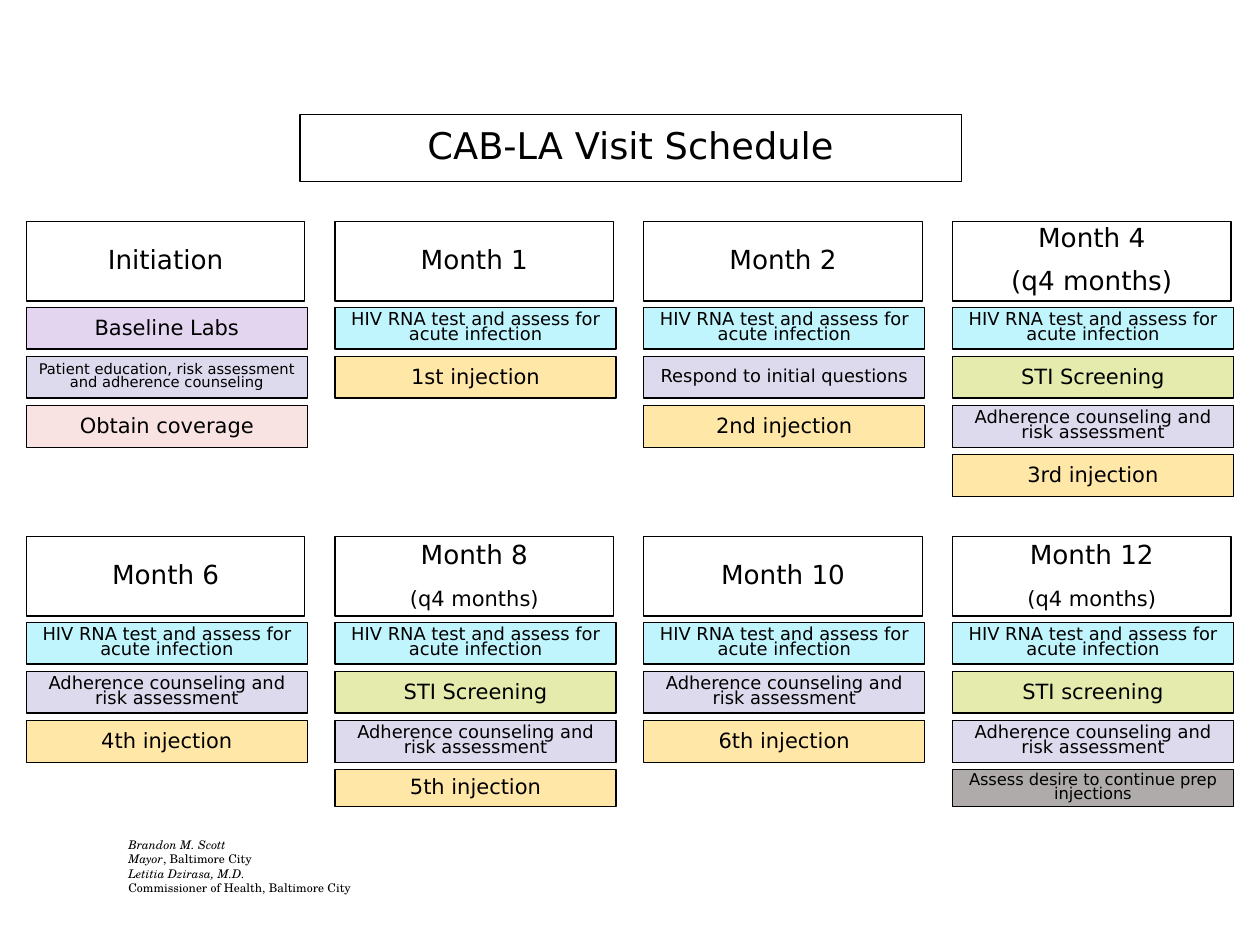
from lxml.etree import SubElement
from pptx import Presentation
from pptx.dml.color import RGBColor
from pptx.enum.shapes import MSO_SHAPE
from pptx.enum.text import MSO_ANCHOR, PP_ALIGN
from pptx.oxml.ns import qn
from pptx.util import Inches, Pt

BLACK = RGBColor(0x00, 0x00, 0x00)
AQUA = RGBColor(0xC1, 0xF5, 0xFD)
LILAC = RGBColor(0xDE, 0xDA, 0xED)
PURPLE = RGBColor(0xE3, 0xD5, 0xF0)
ROSE = RGBColor(0xF0, 0xB4, 0xB5)
AMBER = RGBColor(0xFF, 0xE7, 0xA8)
LIME = RGBColor(0xE4, 0xEB, 0xAD)
GRAY = RGBColor(0xAF, 0xAB, 0xAB)
SANS, SERIF = "DejaVu Sans", "TeX Gyre Schola"

GRID_LEFT, GRID_TOP = 0.21, 1.76
COL_PITCH, ROW_PITCH = 2.45, 2.5
HEAD_W, HEAD_H = 2.21, 0.63
TASK_W, TASK_H, TASK_TOP, TASK_PITCH = 2.23, 0.33, 0.68, 0.39
LAST_H = 0.29

HIV_TEST = ("HIV RNA test and assess for acute infection", AQUA, 10.2, 0.7)
COUNSELING = ("Adherence counseling and risk assessment", LILAC, 10.2, 0.7)


def injection(ordinal):
    """Describe an injection task."""
    return (f"{ordinal} injection", AMBER, 12, 0.9)


def screening(label):
    """Describe a screening task."""
    return (label, LIME, 12, 0.9)


VISITS = [
    [
        ([("Initiation", 15)], 0.9, [
            ("Baseline Labs", PURPLE, 12, 0.9),
            ("Patient education, risk assessment and adherence counseling",
             LILAC, 8.4, 0.7),
            ("Obtain coverage", ROSE, 12, 0.9)]),
        ([("Month 1", 15)], 0.9, [HIV_TEST, injection("1st")]),
        ([("Month 2", 15)], 0.9, [
            HIV_TEST, ("Respond to initial questions", LILAC, 10.2, 0.8),
            injection("2nd")]),
        ([("Month 4", 15), ("(q4 months)", 15)], 0.8, [
            HIV_TEST, screening("STI Screening"), COUNSELING,
            injection("3rd")]),
    ],
    [
        ([("Month 6", 15)], 0.9, [HIV_TEST, COUNSELING, injection("4th")]),
        ([("Month 8", 15), ("(q4 months)", 12)], 0.9, [
            HIV_TEST, screening("STI Screening"), COUNSELING,
            injection("5th")]),
        ([("Month 10", 15)], 0.9, [HIV_TEST, COUNSELING, injection("6th")]),
        ([("Month 12", 15), ("(q4 months)", 12)], 0.9, [
            HIV_TEST, screening("STI screening"), COUNSELING,
            ("Assess desire to continue prep injections", GRAY, 9.3, 0.7)]),
    ],
]

SIGNATURES = [
    [("Brandon M. Scott", True)],
    [("Mayor", True), (", Baltimore City", False)],
    [("Letitia Dzirasa, M.D.", True)],
    [("Commissioner of Health, Baltimore City", False)],
]


def style_paragraph(p, size, spacing):
    """Apply the schedule's text style to a paragraph."""
    p.alignment = PP_ALIGN.CENTER
    p.line_spacing = spacing
    p.space_before = Pt(0)
    p.font.size = Pt(size)
    p.font.name = SANS
    p.font.color.rgb = BLACK


def outline(shape):
    """Draw the thin black border."""
    shape.line.color.rgb = BLACK
    shape.line.width = Pt(0.75)


def add_box(s, box, lines, spacing, fill=None):
    """Add a bordered rectangle with centred lines of text."""
    sp = s.shapes.add_shape(MSO_SHAPE.RECTANGLE, *map(Inches, box))
    sp.shadow.inherit = False
    outline(sp)
    if fill is None:
        sp.fill.background()
    else:
        sp.fill.solid()
        sp.fill.fore_color.rgb = fill
    if fill == ROSE:
        color = sp.fill._xPr.find(qn("a:solidFill"))[0]
        SubElement(color, qn("a:alpha")).set("val", "38000")
    tf = sp.text_frame
    tf.word_wrap = True
    tf.vertical_anchor = MSO_ANCHOR.MIDDLE
    tf.margin_left = tf.margin_right = Inches(0.07)
    tf.margin_top = tf.margin_bottom = Inches(0.04)
    for i, (text, size) in enumerate(lines):
        p = tf.add_paragraph() if i else tf.paragraphs[0]
        p.text = text
        style_paragraph(p, size, spacing)
        if i:
            p.space_before = Pt(10)


def add_visit(s, left, top, heading, spacing, tasks, last_height):
    """Stack a visit heading and its tasks from a top-left corner."""
    add_box(s, (left, top, HEAD_W, HEAD_H), heading, spacing)
    for i, (text, fill, size, task_spacing) in enumerate(tasks):
        height = last_height if i == 3 else TASK_H
        box = (left, top + TASK_TOP + i * TASK_PITCH, TASK_W, height)
        add_box(s, box, [(text, size)], task_spacing, fill)


def add_schedule(s, left, top):
    """Lay the visits out in a grid."""
    for row, (visits, last_height) in enumerate(zip(VISITS, (TASK_H, LAST_H))):
        for col, visit in enumerate(visits):
            add_visit(s, left + col * COL_PITCH, top + row * ROW_PITCH,
                      *visit, last_height)


def add_title(s, box):
    """Place and format the title placeholder."""
    sp = s.shapes.title
    sp.left, sp.top, sp.width, sp.height = map(Inches, box)
    outline(sp)
    tf = sp.text_frame
    tf.word_wrap = True
    tf.vertical_anchor = MSO_ANCHOR.MIDDLE
    p = tf.paragraphs[0]
    p.text = "CAB-LA Visit Schedule"
    style_paragraph(p, 21, 0.9)


def add_signatures(s, box):
    """Add the officials' names and offices."""
    tf = s.shapes.add_textbox(*map(Inches, box)).text_frame
    tf.word_wrap = True
    for i, parts in enumerate(SIGNATURES):
        p = tf.add_paragraph() if i else tf.paragraphs[0]
        p.font.size = Pt(6.8)
        p.font.name = SERIF
        p.font.color.rgb = BLACK
        for text, italic in parts:
            r = p.add_run()
            r.text = text
            r.font.italic = italic


def main():
    """Build and save the visit schedule."""
    prs = Presentation()
    prs.slide_width, prs.slide_height = Inches(10), Inches(7.5)
    s = prs.slides.add_slide(prs.slide_layouts[5])
    add_title(s, (2.38, 0.91, 5.25, 0.53))
    add_schedule(s, GRID_LEFT, GRID_TOP)
    add_signatures(s, (0.92, 6.6, 2.96, 0.56))
    prs.save("out.pptx")


if __name__ == "__main__":
    main()
